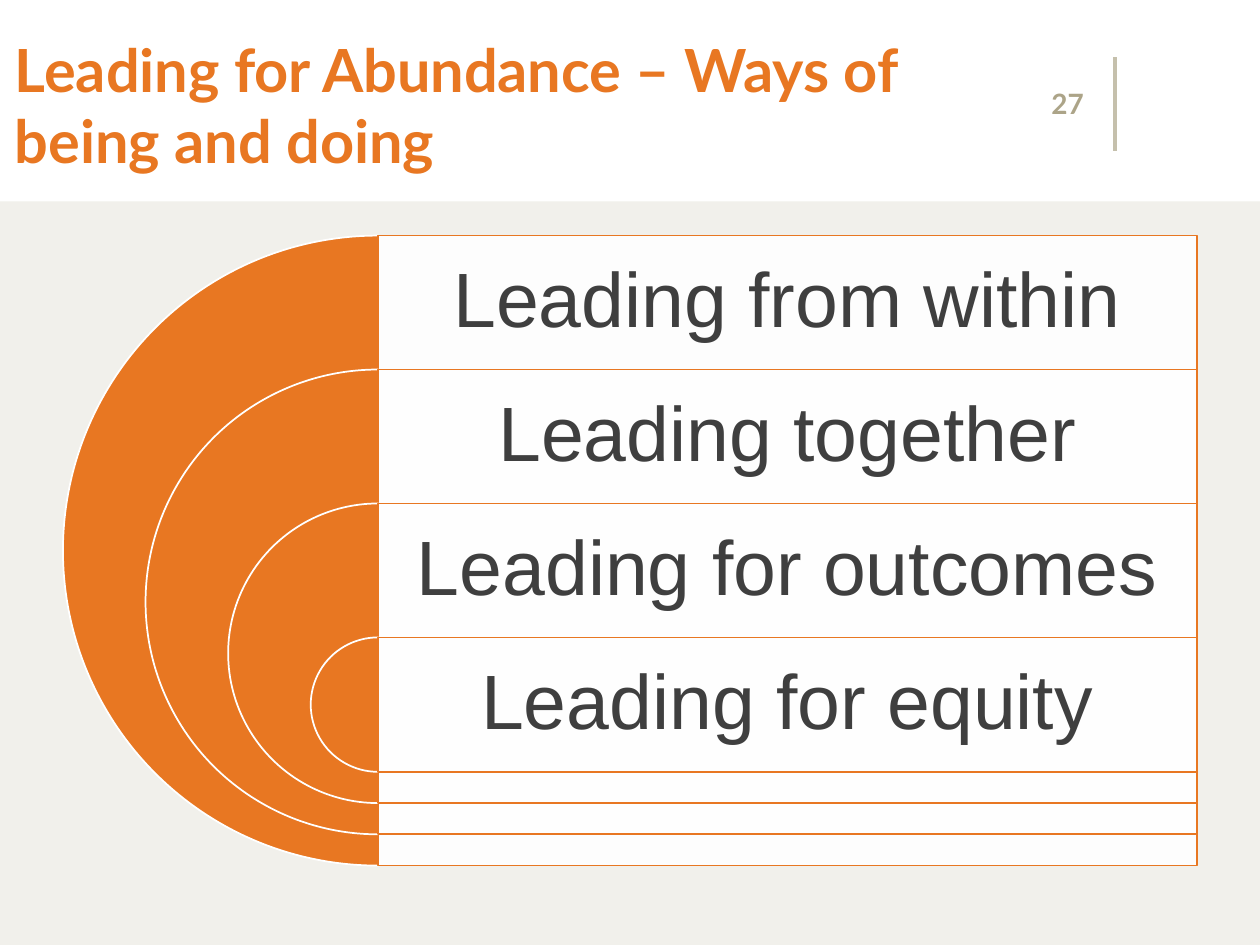
from lxml.etree import SubElement
from pptx import Presentation
from pptx.dml.color import RGBColor
from pptx.enum.shapes import MSO_CONNECTOR, MSO_SHAPE
from pptx.enum.text import MSO_ANCHOR, MSO_AUTO_SIZE, PP_ALIGN
from pptx.oxml.ns import qn
from pptx.util import Cm, Pt

COLORS = {
    "orange": "E87722",
    "white": "FFFFFF",
    "panel": "F1F0EB",
    "rule": "C5C0AC",
    "number": "ACA488",
    "text": "3F3F3F",
}
PRACTICES = [
    "Leading from within",
    "Leading together",
    "Leading for outcomes",
    "Leading for equity",
]


def rgb(name):
    """Return the named colour."""
    return RGBColor.from_string(COLORS[name])


def write(frame, words, font, size, color, align, bold=False, insets=(0.25, 0.13, 0.25, 0.13)):
    """Put one formatted, vertically centred paragraph in a text frame."""
    frame.word_wrap = True
    frame.auto_size = MSO_AUTO_SIZE.NONE
    frame.vertical_anchor = MSO_ANCHOR.MIDDLE
    frame.margin_left, frame.margin_top, frame.margin_right, frame.margin_bottom = map(Cm, insets)
    paragraph = frame.paragraphs[0]
    paragraph.alignment = align
    run = paragraph.add_run()
    run.text = words
    run.font.name = font
    run.font.size = Pt(size)
    run.font.bold = bold
    run.font.color.rgb = rgb(color)
    return paragraph


def add_block(slide, preset, box, fill, line=None):
    """Add a flat filled shape, outlined when a line colour is given."""
    block = slide.shapes.add_shape(preset, *map(Cm, box))
    block.shadow.inherit = False
    block.fill.solid()
    block.fill.fore_color.rgb = rgb(fill)
    if line:
        block.line.color.rgb = rgb(line)
        block.line.width = Pt(1)
    else:
        block.line.fill.background()
    return block


def add_header(slide, left, top, width, height):
    """Fill the title and add the page number beside its vertical rule."""
    title = slide.shapes.title
    title.left, title.top = Cm(left + 0.3), Cm(top + 0.66)
    title.width, title.height = Cm(width - 4.57), Cm(height - 1.19)
    write(title.text_frame, "Leading for Abundance – Ways of being and doing",
          "Lato", 34, "orange", PP_ALIGN.LEFT, True, (0, 0.13, 0.25, 0.13))

    rule_x, rule_top, rule_length = left + width - 2.92, top + 1.14, 1.9
    rule = slide.shapes.add_connector(
        MSO_CONNECTOR.STRAIGHT, Cm(rule_x), Cm(rule_top + rule_length), Cm(rule_x), Cm(rule_top))
    rule.line.color.rgb = rgb("rule")
    rule.line.width = Pt(2)
    SubElement(rule._element.spPr, qn("a:effectLst"))

    number = slide.shapes.add_textbox(
        Cm(rule_x - 2.28), Cm(rule_top), Cm(1.9), Cm(rule_length))
    write(number.text_frame, "27", "Lato", 16, "number", PP_ALIGN.RIGHT, True)


def add_target(slide, left, top, width, height):
    """Nest half discs, each joined to a labelled panel on its right."""
    row, shrink = 2.7, 3.33
    center = left + height / 2
    panel_width = width - height / 2
    for level, practice in enumerate(PRACTICES):
        size = height - level * shrink
        row_top = top + level * row
        disc = add_block(slide, MSO_SHAPE.PIE,
                         (center - size / 2, row_top, size, size), "orange", "white")
        disc.adjustments[0], disc.adjustments[1] = 54, 162

        panel = add_block(slide, MSO_SHAPE.RECTANGLE,
                          (center, row_top, panel_width, size), "white", "orange")
        fill_color = panel._element.spPr.find(qn("a:solidFill"))[0]
        SubElement(fill_color, qn("a:alpha"), val="90000")

        label = slide.shapes.add_textbox(Cm(center), Cm(row_top), Cm(panel_width), Cm(row))
        paragraph = write(label.text_frame, practice, "Arial", 44, "text",
                          PP_ALIGN.CENTER, insets=(0.46,) * 4)
        paragraph.line_spacing = 0.9


def main():
    """Build the slide and save it."""
    deck = Presentation()
    deck.slide_width, deck.slide_height = Cm(25.4), Cm(19.05)
    slide = deck.slides.add_slide(deck.slide_layouts[5])
    slide.background.fill.solid()
    slide.background.fill.fore_color.rgb = rgb("white")
    header_height = 4.06
    add_block(slide, MSO_SHAPE.RECTANGLE,
              (0, header_height, 25.4, 19.05 - header_height), "panel")
    add_header(slide, 0, 0, 25.4, header_height)
    add_target(slide, 1.27, 4.75, 22.86, 12.7)
    deck.save("out.pptx")


if __name__ == "__main__":
    main()
